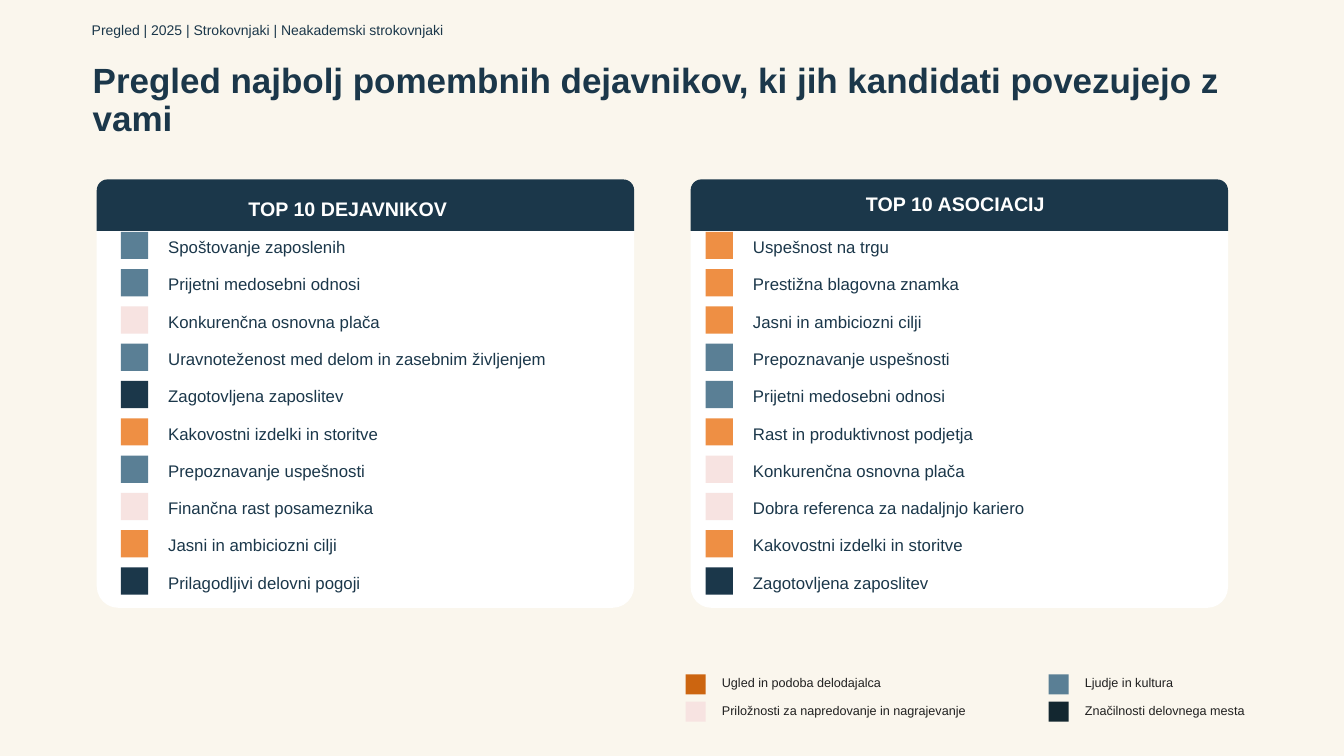
from dataclasses import dataclass

from pptx import Presentation
from pptx.dml.color import RGBColor
from pptx.enum.shapes import MSO_SHAPE as Preset
from pptx.enum.text import MSO_ANCHOR as Anchor, MSO_AUTO_SIZE as AutoSize, PP_ALIGN as Align
from pptx.util import Inches, Pt


@dataclass(frozen=True)
class Theme:
    font: str = "Arial"
    background: str = "FAF6ED"
    navy: str = "1B374A"
    white: str = "FFFFFF"
    steel: str = "5A7F95"
    pink: str = "F7E3E1"
    orange: str = "EE8F44"
    rust: str = "CC6510"
    ink: str = "132730"
    legend_text: str = "202020"
    title_size: int = 25
    breadcrumb_size: int = 10
    heading_size: int = 14
    item_size: int = 12
    legend_size: int = 9


theme = Theme()

deck = Presentation()
deck.slide_width = Inches(13.33)
deck.slide_height = Inches(7.5)
slide = deck.slides.add_slide(deck.slide_layouts[6])
slide.background.fill.solid()
slide.background.fill.fore_color.rgb = RGBColor.from_string(theme.background)


def add_block(preset, left, top, width, height, color, corners=()):
    block = slide.shapes.add_shape(preset, Inches(left), Inches(top), Inches(width), Inches(height))
    block.shadow.inherit = False
    block.fill.solid()
    block.fill.fore_color.rgb = RGBColor.from_string(color)
    block.line.fill.background()
    for index, corner in enumerate(corners):
        block.adjustments[index] = corner


def add_text(text, left, top, width, height, size, color, bold=False, align=Align.LEFT,
             anchor=Anchor.TOP, flush=False, wrap=True, grow=True, spacing=1.0):
    box = slide.shapes.add_textbox(Inches(left), Inches(top), Inches(width), Inches(height))
    frame = box.text_frame
    frame.word_wrap = wrap
    frame.auto_size = AutoSize.SHAPE_TO_FIT_TEXT if grow else AutoSize.NONE
    frame.vertical_anchor = anchor
    if flush:
        frame.margin_left = frame.margin_top = frame.margin_right = frame.margin_bottom = 0
    paragraph = frame.paragraphs[0]
    paragraph.alignment = align
    paragraph.line_spacing = spacing
    run = paragraph.add_run()
    run.text = text
    run.font.name = theme.font
    run.font.size = Pt(size)
    run.font.bold = bold
    run.font.color.rgb = RGBColor.from_string(color)


add_text("Pregled najbolj pomembnih dejavnikov, ki jih kandidati povezujejo z vami",
         0.92, 0.61, 11.5, 0.79, theme.title_size, theme.navy, bold=True,
         anchor=Anchor.MIDDLE, flush=True, grow=False, spacing=0.9)
add_text("Pregled | 2025 | Strokovnjaki | Neakademski strokovnjaki",
         0.91, 0, 12.42, 0.61, theme.breadcrumb_size, theme.navy,
         anchor=Anchor.MIDDLE, flush=True, grow=False, spacing=0.9)

factors = [
    ("Spoštovanje zaposlenih", theme.steel),
    ("Prijetni medosebni odnosi", theme.steel),
    ("Konkurenčna osnovna plača", theme.pink),
    ("Uravnoteženost med delom in zasebnim življenjem", theme.steel),
    ("Zagotovljena zaposlitev", theme.navy),
    ("Kakovostni izdelki in storitve", theme.orange),
    ("Prepoznavanje uspešnosti", theme.steel),
    ("Finančna rast posameznika", theme.pink),
    ("Jasni in ambiciozni cilji", theme.orange),
    ("Prilagodljivi delovni pogoji", theme.navy),
]
associations = [
    ("Uspešnost na trgu", theme.orange),
    ("Prestižna blagovna znamka", theme.orange),
    ("Jasni in ambiciozni cilji", theme.orange),
    ("Prepoznavanje uspešnosti", theme.steel),
    ("Prijetni medosebni odnosi", theme.steel),
    ("Rast in produktivnost podjetja", theme.orange),
    ("Konkurenčna osnovna plača", theme.pink),
    ("Dobra referenca za nadaljnjo kariero", theme.pink),
    ("Kakovostni izdelki in storitve", theme.orange),
    ("Zagotovljena zaposlitev", theme.navy),
]
card_width, card_bottom = 5.33, 6.03
header_top, header_height = 1.78, 0.51
rows_top, row_pitch, marker = 2.3, 0.37, 0.27

cards = [
    (0.96, 2.15, "TOP 10 DEJAVNIKOV", (2.36, 1.9, 2.18, 0.34), 1.2, factors),
    (6.85, 2.29, "TOP 10 ASOCIACIJ", (7.89, 1.86, 3.17, 0.34), 7, associations),
]
for card_left, body_top, heading, heading_area, marker_left, items in cards:
    add_block(Preset.ROUND_2_SAME_RECTANGLE, card_left, body_top, card_width,
              card_bottom - body_top, theme.white, (0, 0.055))
    add_block(Preset.ROUND_2_SAME_RECTANGLE, card_left, header_top, card_width,
              header_height, theme.navy, (0.21, 0))
    add_text(heading, *heading_area, theme.heading_size, theme.white, bold=True, align=Align.CENTER)
    for rank, (item, color) in enumerate(items):
        row_top = rows_top + rank * row_pitch
        add_block(Preset.RECTANGLE, marker_left, row_top, marker, marker, color)
        add_text(item, marker_left + 0.37, row_top, 4, marker, theme.item_size, theme.navy, wrap=False)

legend = [
    [("Ugled in podoba delodajalca", theme.rust), ("Ljudje in kultura", theme.steel)],
    [("Priložnosti za napredovanje in nagrajevanje", theme.pink),
     ("Značilnosti delovnega mesta", theme.ink)],
]
for line, categories in enumerate(legend):
    for column, (category, color) in enumerate(categories):
        key_left = 6.8 + column * 3.6
        key_top = 6.69 + line * 0.27
        add_block(Preset.RECTANGLE, key_left, key_top, 0.2, 0.2, color)
        add_text(category, key_left + 0.36, key_top + 0.01, 2.5, 0.15, theme.legend_size,
                 theme.legend_text, anchor=Anchor.MIDDLE, flush=True)

deck.save("out.pptx")
